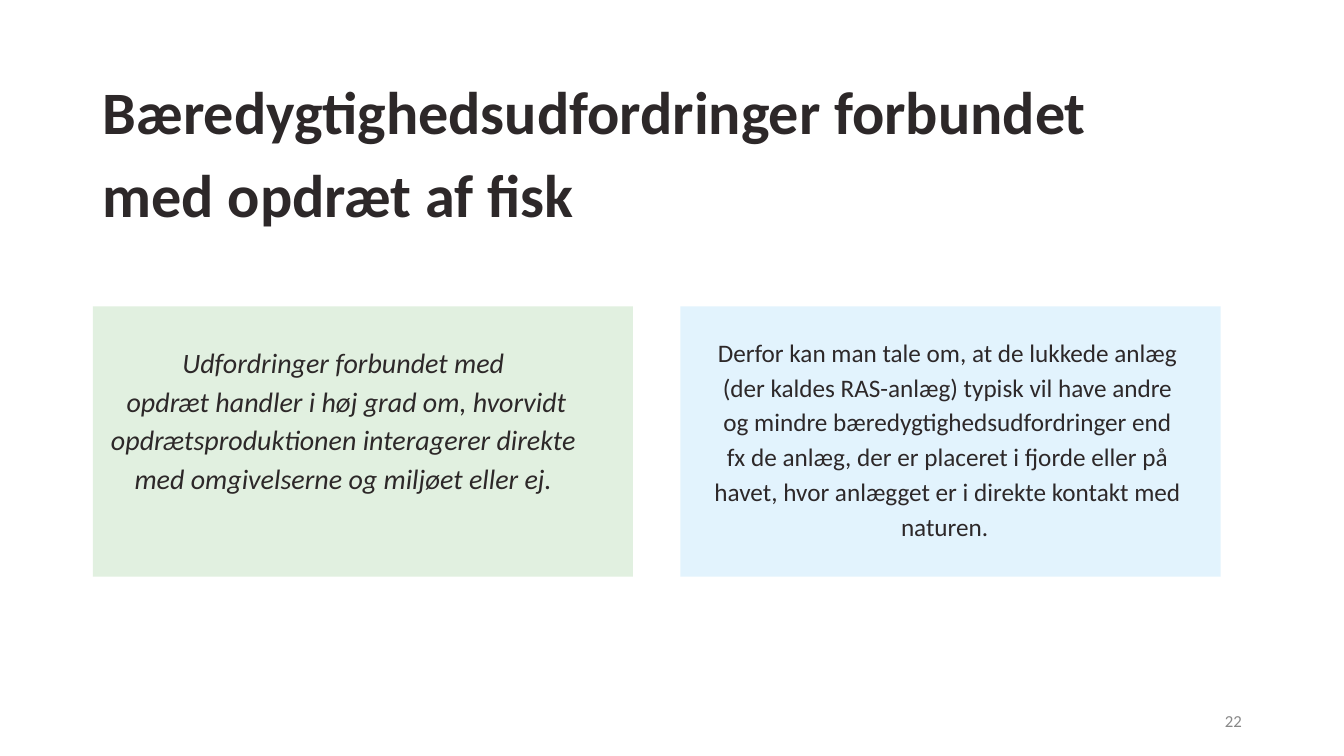
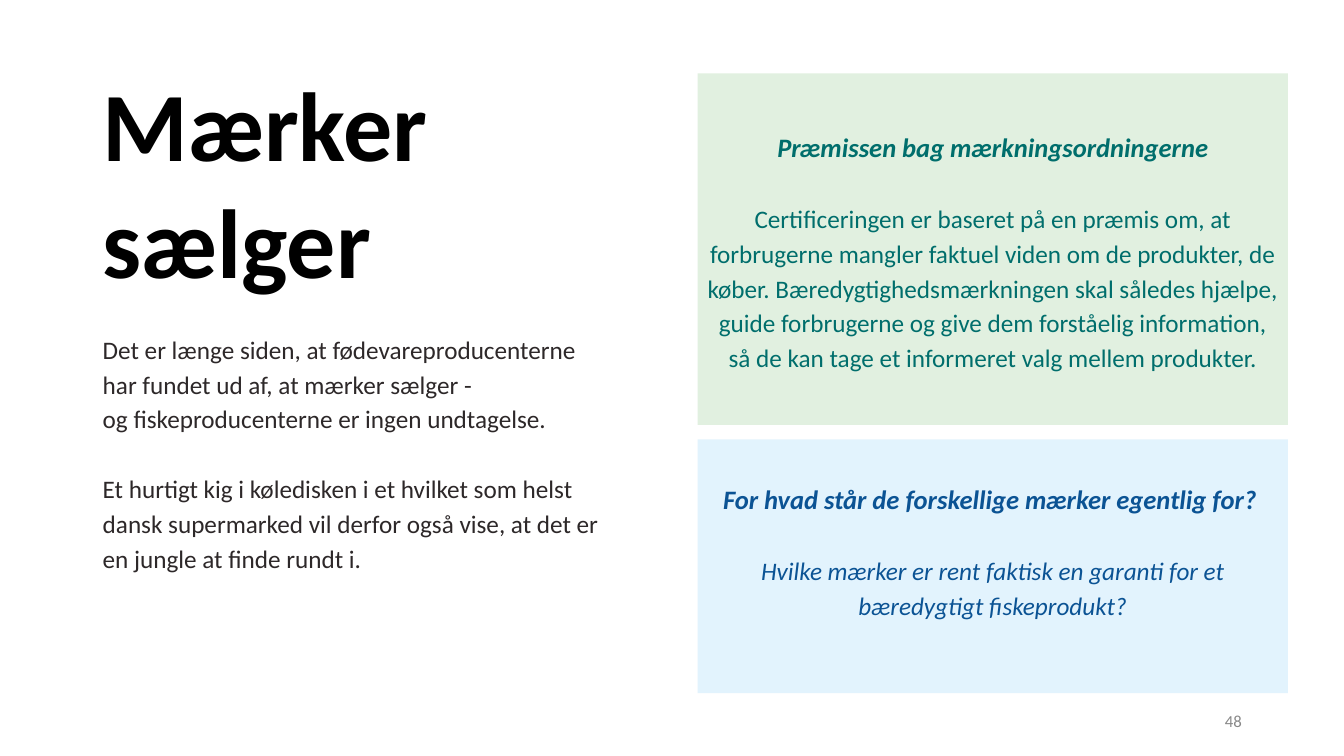
from dataclasses import dataclass

from pptx import Presentation
from pptx.dml.color import RGBColor
from pptx.enum.shapes import MSO_SHAPE
from pptx.enum.text import MSO_ANCHOR, MSO_AUTO_SIZE, PP_ALIGN
from pptx.util import Cm, Pt

RECTANGLE = MSO_SHAPE.RECTANGLE
TOP, MIDDLE = MSO_ANCHOR.TOP, MSO_ANCHOR.MIDDLE
LEFT, CENTER, RIGHT = PP_ALIGN.LEFT, PP_ALIGN.CENTER, PP_ALIGN.RIGHT
NO_AUTOFIT = MSO_AUTO_SIZE.NONE

FONT = "Calibri"
COLORS = {
    "ink": "2D2829",
    "black": "000000",
    "gray": "888888",
    "green_fill": "E1F0E0",
    "blue_fill": "E2F3FD",
    "green_text": "006E6C",
    "blue_text": "0B5394",
}
LINE_SPACING = 1.15
TITLE_ONLY = 5
CONTENT_LEFT = 2.34
CONTENT_TOP = 1.85
MARGINS = (0.25, 0.13, 0.25, 0.13)


@dataclass(frozen=True)
class Box:
    """Place and size in centimetres."""
    left: float
    top: float
    width: float
    height: float


@dataclass(frozen=True)
class Line:
    """One paragraph; a vertical tab stands for a line break."""
    text: str
    size: float = 18
    color: str = "ink"
    bold: bool = False
    italic: bool = False
    space_before: float = 0
    spacing: float = LINE_SPACING


@dataclass(frozen=True)
class Panel:
    """A filled rectangle with centred text."""
    box: Box
    fill: str
    lines: tuple[Line, ...]
    anchor: MSO_ANCHOR = TOP
    margins: tuple[float, ...] = MARGINS


def rgb(name: str) -> RGBColor:
    return RGBColor.from_string(COLORS[name])


def place(shape, box: Box) -> None:
    for name in ("left", "top", "width", "height"):
        setattr(shape, name, Cm(getattr(box, name)))


def write(shape, lines: tuple[Line, ...], align: PP_ALIGN = LEFT,
          anchor: MSO_ANCHOR = TOP, margins: tuple[float, ...] = MARGINS) -> None:
    frame = shape.text_frame
    frame_format = {"word_wrap": True, "auto_size": NO_AUTOFIT, "vertical_anchor": anchor}
    for side, margin in zip(("left", "top", "right", "bottom"), margins):
        frame_format[f"margin_{side}"] = Cm(margin)
    for name, value in frame_format.items():
        setattr(frame, name, value)

    for index, line in enumerate(lines):
        paragraph = frame.add_paragraph() if index else frame.paragraphs[0]
        paragraph.text = line.text
        paragraph_format = {"alignment": align, "line_spacing": line.spacing,
                            "space_before": Pt(line.space_before), "space_after": Pt(0)}
        for name, value in paragraph_format.items():
            setattr(paragraph, name, value)
        font_format = {"name": FONT, "size": Pt(line.size),
                       "bold": line.bold, "italic": line.italic}
        for run in paragraph.runs:
            for name, value in font_format.items():
                setattr(run.font, name, value)
            run.font.color.rgb = rgb(line.color)


def add_text(slide, box: Box, lines: tuple[Line, ...], align: PP_ALIGN = LEFT,
             anchor: MSO_ANCHOR = TOP) -> None:
    shape = slide.shapes.add_textbox(0, 0, 0, 0)
    place(shape, box)
    write(shape, lines, align, anchor)


def add_panel(slide, panel: Panel) -> None:
    shape = slide.shapes.add_shape(RECTANGLE, 0, 0, 0, 0)
    place(shape, panel.box)
    shape.shadow.inherit = False
    shape.fill.solid()
    shape.fill.fore_color.rgb = rgb(panel.fill)
    shape.line.fill.background()
    write(shape, panel.lines, CENTER, panel.anchor, panel.margins)


def add_slide(presentation, title: Line, title_box: Box, number: int,
              panels: tuple[Panel, ...]):
    slide = presentation.slides.add_slide(presentation.slide_layouts[TITLE_ONLY])
    place(slide.shapes.title, title_box)
    write(slide.shapes.title, (title,), anchor=MIDDLE)
    for panel in panels:
        add_panel(slide, panel)
    add_text(slide, Box(23.93, 17.65, 7.62, 1.02),
             (Line(str(number), 12, "gray", spacing=1),), RIGHT, MIDDLE)
    return slide


def build_challenges(presentation) -> None:
    width, height, top, gap = 13.61, 6.81, 7.72, 1.2
    panels = (
        Panel(Box(CONTENT_LEFT, top, width, height), "green_fill", (
            Line("Udfordringer forbundet med \vopdræt handler i høj grad om, hvorvidt "
                 "opdrætsproduktionen interagerer direkte \v"
                 "med omgivelserne og miljøet eller ej. ", 20, italic=True),
        ), margins=(0.25, 0.86, 1.07, 0.13)),
        Panel(Box(CONTENT_LEFT + width + gap, top, width, height), "blue_fill", (
            Line("Derfor kan man tale om, at de lukkede anlæg (der kaldes RAS-anlæg) "
                 "typisk vil have andre og mindre bæredygtighedsudfordringer end fx de "
                 "anlæg, der er placeret i fjorde eller på havet, hvor anlægget er i "
                 "direkte kontakt med naturen. "),
        ), margins=(0.79, 0.66, 0.94, 0.13)),
    )
    title = Line("Bæredygtighedsudfordringer forbundet \vmed opdræt af fisk", 43, bold=True)
    add_slide(presentation, title, Box(CONTENT_LEFT, CONTENT_TOP, 29.21, 3.68), 22, panels)


def build_labels(presentation) -> None:
    left, width, green_height, gap = 17.58, 14.88, 8.86, 0.36
    panels = (
        Panel(Box(left, CONTENT_TOP, width, green_height), "green_fill", (
            Line("Præmissen bag mærkningsordningerne", 19, "green_text", True, True),
            Line("Certificeringen er baseret på en præmis om, at forbrugerne mangler "
                 "faktuel viden om de produkter, de køber. Bæredygtighedsmærkningen skal "
                 "således hjælpe, guide forbrugerne og give dem forståelig information, "
                 "så de kan tage et informeret valg mellem produkter.",
                 color="green_text", space_before=26),
        ), MIDDLE),
        Panel(Box(left, CONTENT_TOP + green_height + gap, width, 6.4), "blue_fill", (
            Line("For hvad står de forskellige mærker egentlig for? ", 19,
                 "blue_text", True, True),
            Line("Hvilke mærker er rent faktisk en garanti for et bæredygtigt "
                 "fiskeprodukt?", color="blue_text", italic=True, space_before=26),
        ), margins=(0.25, 0.97, 0.25, 0.13)),
    )
    title = Line("Mærker \vsælger", 70, "black", bold=True, spacing=1)
    slide = add_slide(presentation, title, Box(CONTENT_LEFT, 2.72, 14, 3.68), 48, panels)
    add_text(slide, Box(CONTENT_LEFT, 8.18, 13.23, 6.6), (
        Line("Det er længe siden, at fødevareproducenterne har fundet ud af, at mærker "
             "sælger - \vog fiskeproducenterne er ingen undtagelse."),
        Line("Et hurtigt kig i køledisken i et hvilket som helst dansk supermarked vil "
             "derfor også vise, at det er en jungle at finde rundt i.", space_before=25),
    ))


def main() -> None:
    presentation = Presentation()
    presentation.slide_width = Cm(33.87)
    presentation.slide_height = Cm(19.05)
    build_challenges(presentation)
    build_labels(presentation)
    presentation.save("out.pptx")


if __name__ == "__main__":
    main()
